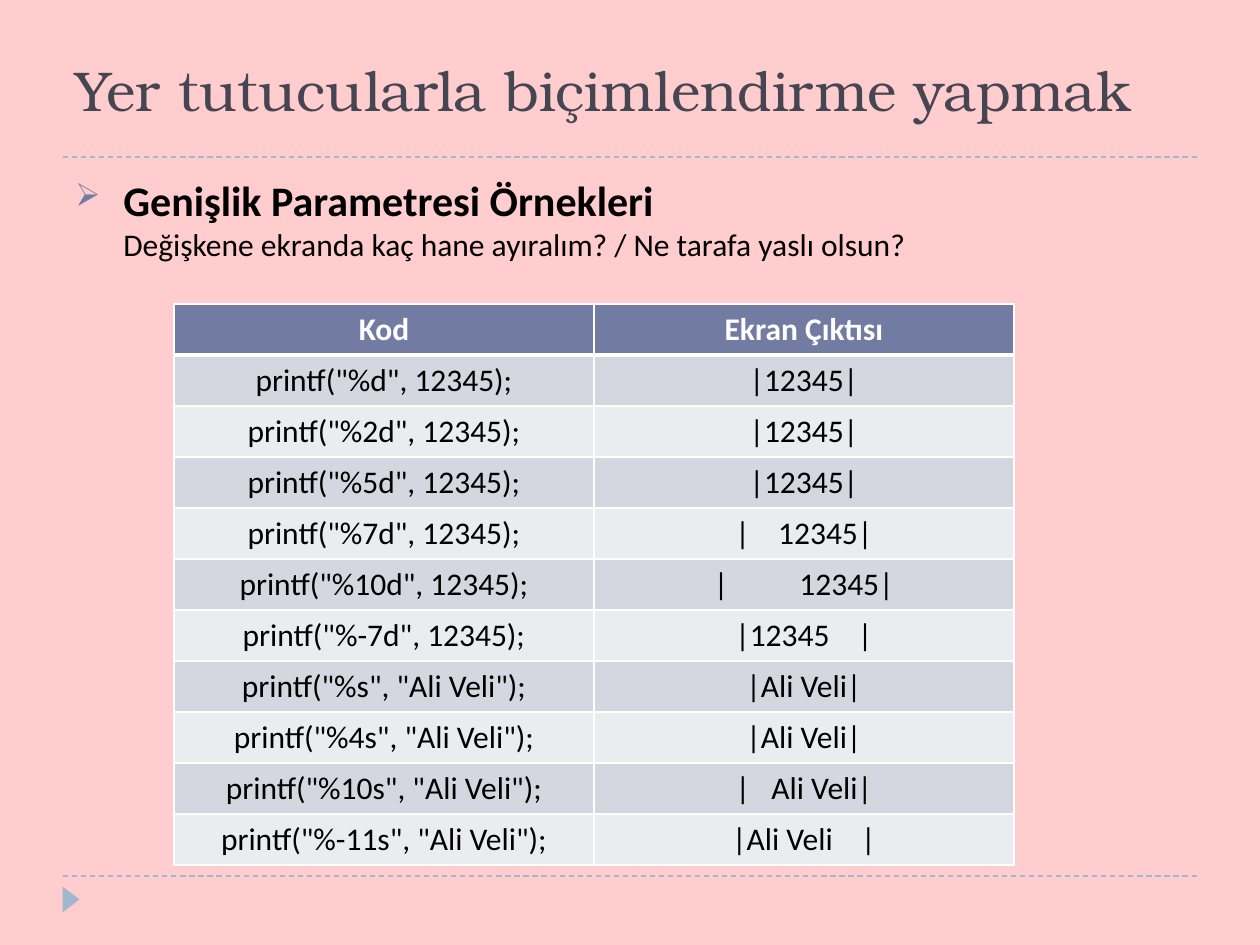
from lxml.etree import SubElement
from pptx import Presentation
from pptx.dml.color import RGBColor
from pptx.enum.dml import MSO_LINE
from pptx.enum.shapes import MSO_CONNECTOR, MSO_SHAPE
from pptx.enum.text import MSO_ANCHOR, PP_ALIGN
from pptx.oxml.ns import qn
from pptx.util import Emu, Pt

PX_PER_INCH = 126
BODY_FONT = "Calibri"
TITLE_FONT = "TeX Gyre Bonum"

PINK = RGBColor(0xFF, 0xCD, 0xCD)
SLATE = RGBColor(0x46, 0x46, 0x53)
INDIGO = RGBColor(0x72, 0x7C, 0xA3)
SKY = RGBColor(0x9F, 0xB8, 0xCD)
BAND_DARK = RGBColor(0xD5, 0xD7, 0xE0)
BAND_LIGHT = RGBColor(0xEB, 0xEC, 0xF0)
BLACK = RGBColor(0x00, 0x00, 0x00)
WHITE = RGBColor(0xFF, 0xFF, 0xFF)

HEADER = ("Kod", "Ekran Çıktısı")
EXAMPLES = [
    ('printf("%d", 12345);', "|12345|"),
    ('printf("%2d", 12345);', "|12345|"),
    ('printf("%5d", 12345);', "|12345|"),
    ('printf("%7d", 12345);', "|    12345|"),
    ('printf("%10d", 12345);', "|          12345|"),
    ('printf("%-7d", 12345);', "|12345    |"),
    ('printf("%s", "Ali Veli");', "|Ali Veli|"),
    ('printf("%4s", "Ali Veli");', "|Ali Veli|"),
    ('printf("%10s", "Ali Veli");', "|   Ali Veli|"),
    ('printf("%-11s", "Ali Veli");', "|Ali Veli    |"),
]


def px(length):
    """Turn pixels into EMU."""
    return Emu(round(length * 914400 / PX_PER_INCH))


def add_run(paragraph, text, size, color, font=BODY_FONT, bold=False):
    """Append one styled run to a paragraph."""
    run = paragraph.add_run()
    run.text = text
    run.font.name = font
    run.font.size = Pt(size)
    run.font.bold = bold
    run.font.color.rgb = color


def add_text_box(slide, left, top, width, height, anchor):
    """Add a wrapping text box and return its first paragraph."""
    frame = slide.shapes.add_textbox(px(left), px(top), px(width), px(height)).text_frame
    frame.word_wrap = True
    frame.vertical_anchor = anchor
    return frame.paragraphs[0]


def add_rule(slide, left, top, width):
    """Draw a dashed horizontal rule."""
    rule = slide.shapes.add_connector(
        MSO_CONNECTOR.STRAIGHT, px(left), px(top), px(left + width), px(top))
    rule.line.color.rgb = SKY
    rule.line.width = Pt(0.75)
    rule.line.dash_style = MSO_LINE.DASH
    SubElement(rule._element.spPr, qn("a:effectLst"))


def add_title(slide, left, top, width, height):
    """Place the title with the rule along its lower edge."""
    add_rule(slide, left, top + height, width)
    paragraph = add_text_box(slide, left, top, width, height, MSO_ANCHOR.MIDDLE)
    add_run(paragraph, "Yer tutucularla biçimlendirme yapmak", 32, SLATE, TITLE_FONT)


def add_footer(slide, left, top, width):
    """Place the lower rule and the page marker under it."""
    add_rule(slide, left, top, width)
    marker = slide.shapes.add_shape(
        MSO_SHAPE.ISOSCELES_TRIANGLE, px(left - 5), px(top + 15), px(26), px(17))
    marker.rotation = 90
    marker.shadow.inherit = False
    marker.fill.solid()
    marker.fill.fore_color.rgb = SKY
    marker.line.fill.background()


def set_bullet(paragraph, character, color, percent, indent):
    """Give a paragraph a coloured bullet with a hanging indent."""
    properties = paragraph._p.get_or_add_pPr()
    properties.set("marL", str(px(indent)))
    properties.set("indent", str(-px(indent)))
    bullet_color = SubElement(properties, qn("a:buClr"))
    SubElement(bullet_color, qn("a:srgbClr"), val=str(color))
    SubElement(properties, qn("a:buSzPct"), val=str(percent * 1000))
    SubElement(properties, qn("a:buChar"), char=character)


def add_body(slide, left, top, width, height):
    """Place the bulleted heading and the questions below it."""
    paragraph = add_text_box(slide, left, top, width, height, MSO_ANCHOR.TOP)
    set_bullet(paragraph, "➢", INDIGO, 76, 48)
    add_run(paragraph, "Genişlik Parametresi Örnekleri", 24, BLACK, bold=True)
    paragraph.add_line_break()
    add_run(paragraph, "Değişkene ekranda kaç hane ayıralım? / Ne tarafa yaslı olsun?", 18, BLACK)


def set_borders(cell, top, bottom):
    """Draw white borders around a cell, with widths in points."""
    properties = cell._tc.get_or_add_tcPr()
    for side, width in (("L", 1), ("R", 1), ("T", top), ("B", bottom)):
        line = SubElement(properties, qn(f"a:ln{side}"), w=str(Pt(width)))
        fill = SubElement(line, qn("a:solidFill"))
        SubElement(fill, qn("a:srgbClr"), val=str(WHITE))


def add_examples_table(slide, left, top, width, row_height):
    """Place the banded table of format codes and their output."""
    rows = [HEADER, *EXAMPLES]
    table = slide.shapes.add_table(
        len(rows), len(HEADER), px(left), px(top), px(width), px(row_height * len(rows))).table
    for row_index, texts in enumerate(rows):
        is_header = row_index == 0
        band = BAND_DARK if row_index % 2 else BAND_LIGHT
        table.rows[row_index].height = px(row_height)
        for column_index, text in enumerate(texts):
            cell = table.cell(row_index, column_index)
            set_borders(cell, 3 if row_index == 1 else 1, 3 if is_header else 1)
            cell.fill.solid()
            cell.fill.fore_color.rgb = INDIGO if is_header else band
            paragraph = cell.text_frame.paragraphs[0]
            paragraph.alignment = PP_ALIGN.CENTER
            add_run(paragraph, text, 18, WHITE if is_header else BLACK, bold=is_header)


def main():
    """Build the slide and save it."""
    presentation = Presentation()
    presentation.slide_width = px(1260)
    presentation.slide_height = px(945)
    slide = presentation.slides.add_slide(presentation.slide_layouts[6])
    slide.background.fill.solid()
    slide.background.fill.fore_color.rgb = PINK
    add_footer(slide, 63, 876, 1134)
    add_title(slide, 63, 21, 1134, 136)
    add_body(slide, 63, 168, 1134, 680)
    add_examples_table(slide, 174, 304, 840, 51)
    presentation.save("out.pptx")


if __name__ == "__main__":
    main()
